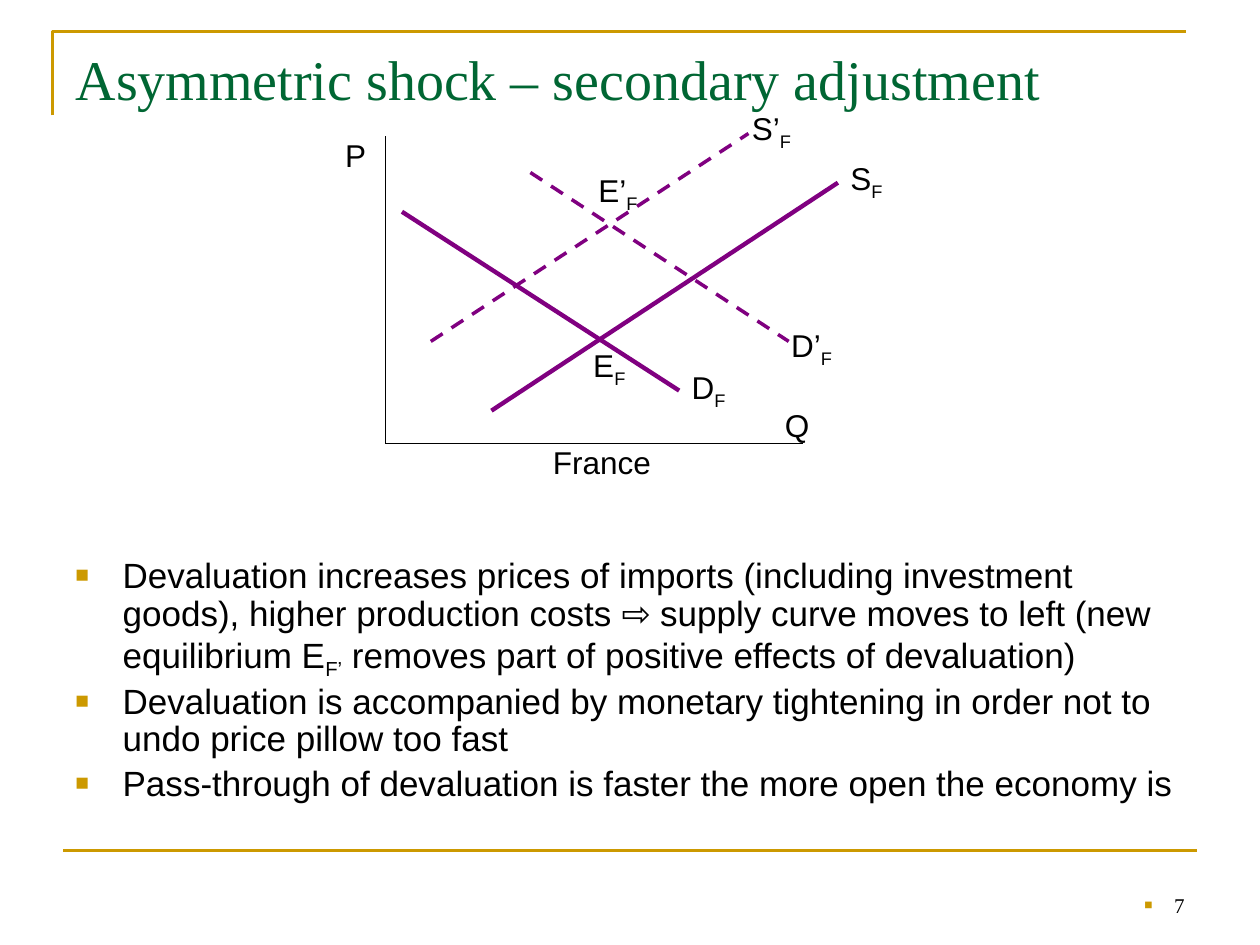
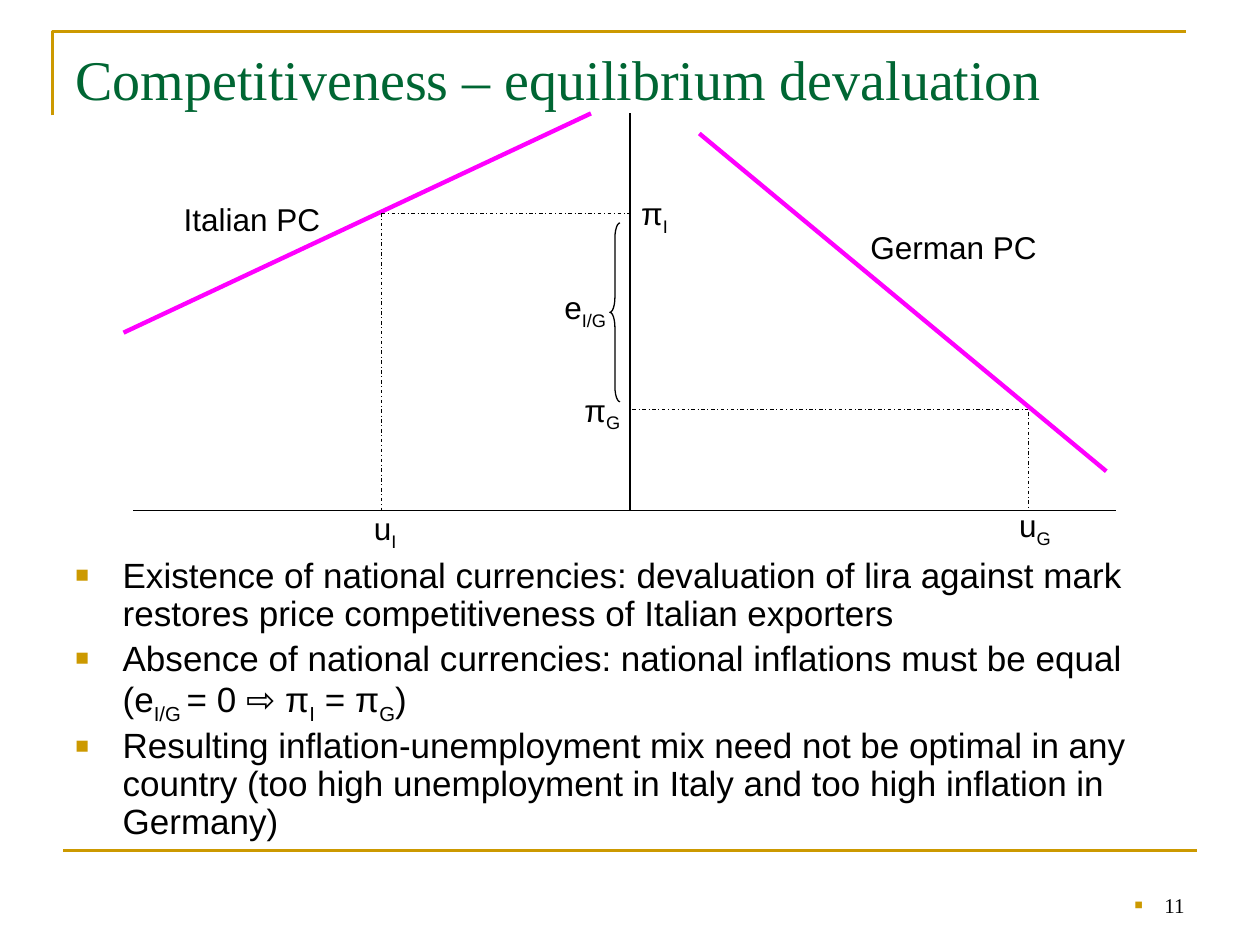
import dataclasses

import pptx
import pptx.dml.color
import pptx.enum.dml
import pptx.enum.shapes
import pptx.enum.text
import pptx.oxml
import pptx.oxml.ns
import pptx.util

Pt = pptx.util.Pt
DASH = pptx.enum.dml.MSO_LINE.DASH
DASH_DOT = pptx.enum.dml.MSO_LINE.DASH_DOT
LEFT = pptx.enum.text.PP_ALIGN.LEFT
RIGHT = pptx.enum.text.PP_ALIGN.RIGHT


@dataclasses.dataclass(frozen=True)
class Theme:
    gold: str = "CC9900"
    green: str = "006633"
    black: str = "000000"
    purple: str = "800080"
    magenta: str = "FF00FF"
    serif: str = "Times New Roman"
    sans: str = "Arial"
    title: int = 32
    body: int = 20
    label: int = 18
    number: int = 12


theme = Theme()


def add_line(s, start, end, color, width, dash=None):
    sp = s.shapes.add_connector(
        pptx.enum.shapes.MSO_CONNECTOR.STRAIGHT, *map(Pt, start + end))
    sp.line.color.rgb = pptx.dml.color.RGBColor.from_string(color)
    sp.line.width = Pt(width)
    if dash:
        sp.line.dash_style = dash
    sp._element.spPr.append(pptx.oxml.parse_xml(
        f'<a:effectLst {pptx.oxml.ns.nsdecls("a")}/>'))


def write_text(sp, texts, font, size, color, align=LEFT, indent=0):
    tf = sp.text_frame
    tf.word_wrap = True
    for i, text in enumerate(texts):
        p = tf.add_paragraph() if i else tf.paragraphs[0]
        p.alignment = align
        if indent:
            p.line_spacing = 0.9
            p.space_before = Pt(size * 0.2)
            pPr = p._p.get_or_add_pPr()
            pPr.set("marL", str(Pt(indent)))
            pPr.set("indent", str(-Pt(indent)))
            for xml in (f'buClr {{}}><a:srgbClr val="{theme.gold}"/></a:buClr>',
                        'buSzPct {} val="65000"/>',
                        'buFont {} typeface="Arial"/>',
                        'buChar {} char="■"/>'):
                pPr.append(pptx.oxml.parse_xml(
                    "<a:" + xml.format(pptx.oxml.ns.nsdecls("a"))))
        for j, part in enumerate(text.split("|")):
            r = p.add_run()
            r.text = part
            r.font.name = font
            r.font.size = Pt(size)
            r.font.color.rgb = pptx.dml.color.RGBColor.from_string(color)
            if j % 2:
                r._r.get_or_add_rPr().set("baseline", "-25000")


axis = (theme.black, 0.75)
curve = (theme.purple, 2.5)
shifted = (theme.purple, 2, DASH)
phillips = (theme.magenta, 2.5)
guide = (theme.black, 0.5, DASH_DOT)

slides = [
    dict(
        title="Asymmetric shock – secondary adjustment",
        number="7",
        lines=[
            ((220.3, 77.8), (220.3, 253.4), axis),
            ((220.3, 253.4), (458.6, 253.4), axis),
            ((280.8, 234.7), (478.8, 104.4), curve),
            ((229.7, 121), (388.1, 223.2), curve),
            ((303.1, 98.6), (450.7, 195.1), shifted),
            ((246.2, 195.1), (427.7, 76.3), shifted),
        ],
        labels=[
            (478.8, 87.1, 34, "S|F"),
            (388.1, 206.6, 40, "D|F"),
            (190.1, 74.2, 34, "P"),
            (441.4, 228.2, 34, "Q"),
            (331.9, 194.4, 40, "E|F"),
            (422.6, 59, 40, "S’|F"),
            (445, 182.9, 40, "D’|F"),
            (334.8, 94.3, 40, "E’|F"),
            (308.9, 249.8, 96, "France"),
        ],
        bullets=[
            "Devaluation increases prices of imports (including investment goods), "
            "higher production costs ⇨ supply curve moves to left (new equilibrium "
            "E|F’| removes part of positive effects of devaluation)",
            "Devaluation is accompanied by monetary tightening in order not to "
            "undo price pillow too fast",
            "Pass-through of devaluation is faster the more open the economy is",
        ],
    ),
    dict(
        title="Competitiveness – equilibrium devaluation",
        number="11",
        lines=[
            ((76.3, 291.6), (637.9, 291.6), axis),
            ((360, 64.8), (360, 291.6), axis),
            ((399.6, 76.3), (632.2, 269.3), phillips),
            ((337.7, 64.8), (70.6, 190.1), phillips),
            ((361.4, 234), (587.5, 234), guide),
            ((587.5, 235.4), (587.5, 291.6), guide),
            ((218.2, 121.7), (360, 121.7), guide),
            ((218.2, 121.7), (218.2, 291.6), guide),
        ],
        labels=[
            (97.9, 110.9, 97, "Italian PC"),
            (490.3, 126.7, 136, "German PC"),
            (575.3, 285.8, 40, "u|G"),
            (206.6, 287.3, 40, "u|I"),
            (326.9, 219.6, 40, "π|G"),
            (359.3, 107.3, 40, "π|I"),
            (315.4, 161.3, 46, "e|I/G"),
        ],
        bullets=[
            "Existence of national currencies: devaluation of lira against mark "
            "restores price competitiveness of Italian exporters",
            "Absence of national currencies: national inflations must be equal "
            "(e|I/G |= 0 ⇨ π|I| = π|G|)",
            "Resulting inflation-unemployment mix need not be optimal in any "
            "country (too high unemployment in Italy and too high inflation in "
            "Germany)",
        ],
    ),
]

prs = pptx.Presentation()
prs.slide_width, prs.slide_height = Pt(720), Pt(540)

for content in slides:
    s = prs.slides.add_slide(prs.slide_layouts[5])

    builder = s.shapes.build_freeform(Pt(30), Pt(66))
    builder.add_line_segments([(Pt(30), Pt(18)), (Pt(678), Pt(18))], close=False)
    frame = builder.convert_to_shape()
    frame.shadow.inherit = False
    frame.fill.background()
    frame.line.color.rgb = pptx.dml.color.RGBColor.from_string(theme.gold)
    frame.line.width = Pt(1.5)
    add_line(s, (36, 486), (684, 486), theme.gold, 1.5)

    number = s.shapes.add_textbox(Pt(516), Pt(492), Pt(168), Pt(36))
    number.text_frame.vertical_anchor = pptx.enum.text.MSO_ANCHOR.BOTTOM
    write_text(number, [content["number"]], theme.serif, theme.number,
               theme.black, RIGHT, indent=17)

    title = s.shapes.title
    title.left, title.top, title.width, title.height = map(Pt, (36, 21.6, 648, 52))
    title.text_frame.vertical_anchor = pptx.enum.text.MSO_ANCHOR.TOP
    title.text_frame.auto_size = pptx.enum.text.MSO_AUTO_SIZE.NONE
    write_text(title, [content["title"]], theme.serif, theme.title, theme.green)

    for start, end, style in content["lines"]:
        add_line(s, start, end, *style)
    for x, y, width, text in content["labels"]:
        label = s.shapes.add_textbox(Pt(x), Pt(y), Pt(width), Pt(29))
        write_text(label, [text], theme.sans, theme.label, theme.black)

    body = s.shapes.add_textbox(Pt(36), Pt(315.4), Pt(648), Pt(173))
    write_text(body, content["bullets"], theme.sans, theme.body, theme.black,
               indent=27)

brace = s.shapes.add_shape(pptx.enum.shapes.MSO_SHAPE.LEFT_BRACE,
                           Pt(348.5), Pt(127.4), Pt(5.8), Pt(102.2))
brace.adjustments[0] = 1.48
brace.adjustments[1] = 0.5
brace.shadow.inherit = False
brace.fill.background()
brace.line.color.rgb = pptx.dml.color.RGBColor.from_string(theme.black)
brace.line.width = Pt(0.75)

prs.save("out.pptx")
